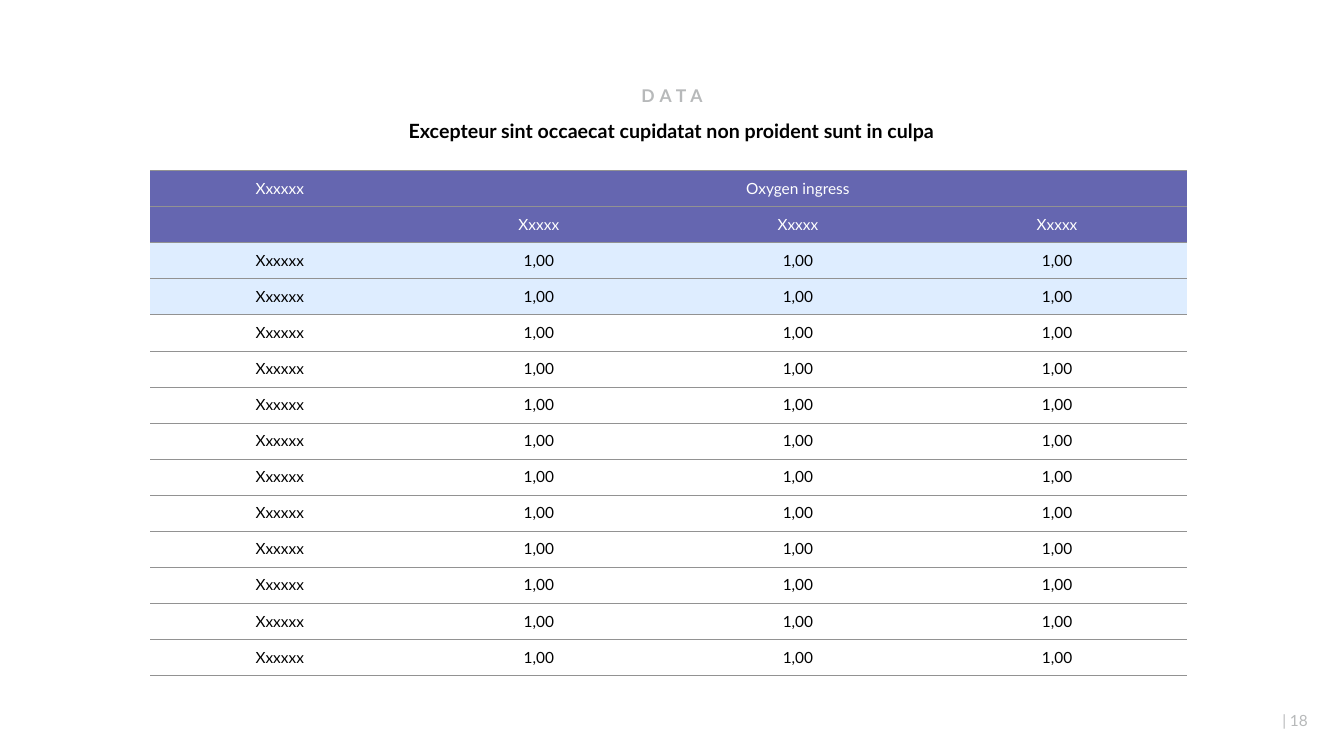
from dataclasses import dataclass

from lxml import etree
from pptx import Presentation
from pptx.dml.color import RGBColor
from pptx.enum.text import MSO_ANCHOR, PP_ALIGN
from pptx.oxml.ns import qn
from pptx.util import Inches, Pt

LEFT, CENTER, RIGHT = PP_ALIGN.LEFT, PP_ALIGN.CENTER, PP_ALIGN.RIGHT
TOP, MIDDLE = MSO_ANCHOR.TOP, MSO_ANCHOR.MIDDLE
PLAIN_TABLE_STYLE = "{2D5ABB26-0587-4C30-8999-92F81FD0307C}"


@dataclass(frozen=True)
class Theme:
    font: str = "Lato"
    muted: str = "B7B9BA"
    ink: str = "000000"
    white: str = "FFFFFF"
    header: str = "6566B0"
    highlight: str = "DEEDFF"
    rule: str = "929292"
    rule_width: float = 0.5
    body_size: float = 11
    section_size: float = 12.5
    headline_size: float = 14


class SlideBuilder:
    def __init__(self, slide, theme):
        self.slide = slide
        self.theme = theme

    def style(self, paragraph, size, color, align, bold=False):
        paragraph.alignment = align
        for run in paragraph.runs:
            run.font.name = self.theme.font
            run.font.size = Pt(size)
            run.font.bold = bold
            run.font.color.rgb = RGBColor.from_string(color)

    def text(self, box, content, size, color, align=CENTER, anchor=TOP,
             bold=False, line_spacing=None, tracking=None):
        frame = self.slide.shapes.add_textbox(*map(Inches, box)).text_frame
        frame.word_wrap = True
        frame.vertical_anchor = anchor
        frame.text = content
        paragraph = frame.paragraphs[0]
        paragraph.line_spacing = line_spacing
        self.style(paragraph, size, color, align, bold)
        if tracking:
            # Letter spacing is given in hundredths of a point
            for run in paragraph.runs:
                run.font._element.set("spc", str(round(tracking * 100)))

    def border(self, cell, side):
        line = etree.SubElement(cell._tc.get_or_add_tcPr(), qn(f"a:{side}"),
                                w=str(Pt(self.theme.rule_width)))
        fill = etree.SubElement(line, qn("a:solidFill"))
        etree.SubElement(fill, qn("a:srgbClr"), val=self.theme.rule)

    def cell(self, cell, content, fill, color, top_rule):
        cell.margin_left = cell.margin_right = Inches(0.03)
        cell.margin_top = cell.margin_bottom = Inches(0.03)
        cell.vertical_anchor = MIDDLE
        if top_rule:
            self.border(cell, "lnT")
        self.border(cell, "lnB")
        if fill:
            cell.fill.solid()
            cell.fill.fore_color.rgb = RGBColor.from_string(fill)
        else:
            cell.fill.background()
        if content:
            cell.text_frame.text = content
            self.style(cell.text_frame.paragraphs[0], self.theme.body_size,
                       color, CENTER)

    def table(self, box, rows, header_rows, highlighted_rows):
        graphic = self.slide.shapes.add_table(len(rows), len(rows[0]),
                                              *map(Inches, box))
        table = graphic.table
        properties = table._tbl.tblPr
        properties.find(qn("a:tableStyleId")).text = PLAIN_TABLE_STYLE
        table.first_row = table.horz_banding = False
        for r, row in enumerate(rows):
            is_header = r < header_rows
            if is_header:
                fill = self.theme.header
            elif r < header_rows + highlighted_rows:
                fill = self.theme.highlight
            else:
                fill = None
            color = self.theme.white if is_header else self.theme.ink
            for c, content in enumerate(row):
                self.cell(table.cell(r, c), content, fill, color, r == 0)
        return table


def main():
    presentation = Presentation()
    presentation.slide_width = Inches(13.33)
    presentation.slide_height = Inches(7.5)
    theme = Theme()
    slide = presentation.slides.add_slide(presentation.slide_layouts[6])
    builder = SlideBuilder(slide, theme)

    # Section label and headline
    builder.text((1.49, 0.82, 10.35, 0.29), "DATA", theme.section_size,
                 theme.muted, anchor=MIDDLE, bold=True, line_spacing=0.9,
                 tracking=3.8)
    builder.text((2.84, 1.16, 7.64, 0.42),
                 "Excepteur sint occaecat cupidatat non proident sunt in culpa",
                 theme.headline_size, theme.ink, bold=True, line_spacing=0.9)

    # Measurements, with one heading across the value columns
    headings = [["Xxxxxx", "Oxygen ingress", "", ""],
                [""] + ["Xxxxx"] * 3]
    measurements = [["Xxxxxx"] + ["1,00"] * 3 for _ in range(12)]
    ingress = builder.table((1.49, 1.69, 10.28, 5.01), headings + measurements,
                            header_rows=len(headings), highlighted_rows=2)
    ingress.cell(0, 1).merge(ingress.cell(0, 3))

    # Page number
    builder.text((12.62, 7.01, 0.3, 0.29), "|", theme.body_size, theme.muted,
                 align=LEFT)
    builder.text((12.36, 6.95, 0.71, 0.4), "18", theme.body_size, theme.muted,
                 align=RIGHT, anchor=MIDDLE)

    presentation.save("out.pptx")


if __name__ == "__main__":
    main()
